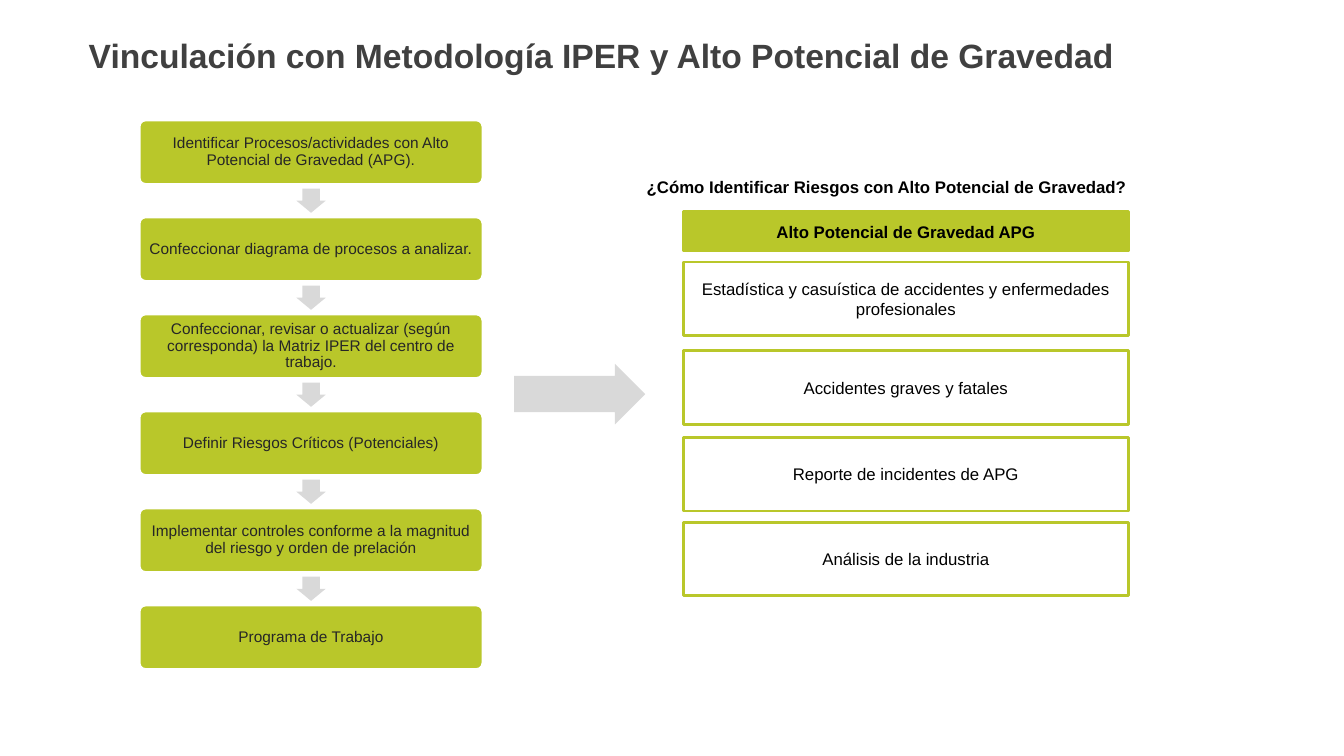
from dataclasses import dataclass

from pptx import Presentation
from pptx.dml.color import RGBColor
from pptx.enum.shapes import MSO_SHAPE
from pptx.enum.text import MSO_ANCHOR, PP_ALIGN
from pptx.util import Inches, Pt

ROUNDED = MSO_SHAPE.ROUNDED_RECTANGLE
RECTANGLE = MSO_SHAPE.RECTANGLE
DOWN_ARROW = MSO_SHAPE.DOWN_ARROW
RIGHT_ARROW = MSO_SHAPE.RIGHT_ARROW
TOP, MIDDLE = MSO_ANCHOR.TOP, MSO_ANCHOR.MIDDLE
LEFT, CENTER = PP_ALIGN.LEFT, PP_ALIGN.CENTER


@dataclass(frozen=True)
class Theme:
    font: str = "Arial"
    green: RGBColor = RGBColor(0xB9, 0xC7, 0x2A)
    gray: RGBColor = RGBColor(0xD9, 0xD9, 0xD9)
    white: RGBColor = RGBColor(0xFF, 0xFF, 0xFF)
    black: RGBColor = RGBColor(0, 0, 0)
    title_color: RGBColor = RGBColor(0x40, 0x40, 0x40)
    step_color: RGBColor = RGBColor(0x26, 0x26, 0x26)
    title_size: Pt = Pt(24)
    step_size: Pt = Pt(11)
    card_size: Pt = Pt(12)
    border: Pt = Pt(2)


theme = Theme()


def write(box, text, size, color, bold=False, align=CENTER, anchor=MIDDLE, inset=0.1, spacing=1.0):
    frame = box.text_frame
    frame.word_wrap = True
    frame.vertical_anchor = anchor
    frame.margin_left = frame.margin_right = Inches(inset)
    frame.margin_top = frame.margin_bottom = Inches(0.05)
    paragraph = frame.paragraphs[0]
    paragraph.alignment = align
    paragraph.line_spacing = spacing
    run = paragraph.add_run()
    run.text = text
    run.font.name = theme.font
    run.font.size = size
    run.font.bold = bold
    run.font.color.rgb = color


def draw(kind, left, top, width, height, fill=None, line=None, adjustments=()):
    shape = slide.shapes.add_shape(kind, Inches(left), Inches(top), Inches(width), Inches(height))
    shape.shadow.inherit = False
    for index, value in enumerate(adjustments):
        shape.adjustments[index] = value
    if fill is None:
        shape.fill.background()
    else:
        shape.fill.solid()
        shape.fill.fore_color.rgb = fill
    if line is None:
        shape.line.fill.background()
    else:
        shape.line.color.rgb = line
        shape.line.width = theme.border
    return shape


presentation = Presentation()
presentation.slide_width = Inches(13.33)
presentation.slide_height = Inches(7.5)
slide = presentation.slides.add_slide(presentation.slide_layouts[5])

title = slide.shapes.title
title.left, title.top = Inches(0.78), Inches(0.3)
title.width, title.height = Inches(11.57), Inches(0.5)
write(title, "Vinculación con Metodología IPER y Alto Potencial de Gravedad",
      theme.title_size, theme.title_color, bold=True, align=LEFT, anchor=TOP)

steps = [
    "Identificar Procesos/actividades con Alto Potencial de Gravedad (APG).",
    "Confeccionar diagrama de procesos a analizar.",
    "Confeccionar, revisar o actualizar (según corresponda) la Matriz IPER del centro de trabajo.",
    "Definir Riesgos Críticos (Potenciales)",
    "Implementar controles conforme a la magnitud del riesgo y orden de prelación",
    "Programa de Trabajo",
]
step_left, step_top, step_width, step_height = 1.38, 1.19, 3.41, 0.64
step_pitch = 0.9625
arrow_width, arrow_height = 0.29, 0.24
arrow_left = step_left + (step_width - arrow_width) / 2
arrow_gap = (step_pitch - step_height - arrow_height) / 2

for number, step_text in enumerate(steps):
    top = step_top + number * step_pitch
    step = draw(ROUNDED, step_left, top, step_width, step_height,
                theme.green, theme.white, [0.1])
    write(step, step_text, theme.step_size, theme.step_color, inset=0.07, spacing=0.9)
    if number < len(steps) - 1:
        draw(DOWN_ARROW, arrow_left, top + step_height + arrow_gap,
             arrow_width, arrow_height, theme.gray, adjustments=[0.6, 0.5])

draw(RIGHT_ARROW, 5.1, 3.61, 1.3, 0.6, theme.gray, adjustments=[0.6, 0.5])

question = slide.shapes.add_textbox(Inches(6.15), Inches(1.7), Inches(5.29), Inches(0.3))
write(question, "¿Cómo Identificar Riesgos con Alto Potencial de Gravedad?",
      theme.card_size, theme.black, bold=True, anchor=TOP)

card_left, card_width, card_height = 6.78, 4.41, 0.73
header = draw(RECTANGLE, card_left, 2.1, card_width, 0.39, theme.green, theme.green)
write(header, "Alto Potencial de Gravedad APG", theme.card_size, theme.black, bold=True)

sources = [
    (2.6, "Estadística y casuística de accidentes y enfermedades profesionales"),
    (3.48, "Accidentes graves y fatales"),
    (4.34, "Reporte de incidentes de APG"),
    (5.18, "Análisis de la industria"),
]
for top, source_text in sources:
    card = draw(RECTANGLE, card_left, top, card_width, card_height, line=theme.green)
    write(card, source_text, theme.card_size, theme.black)

presentation.save("out.pptx")
